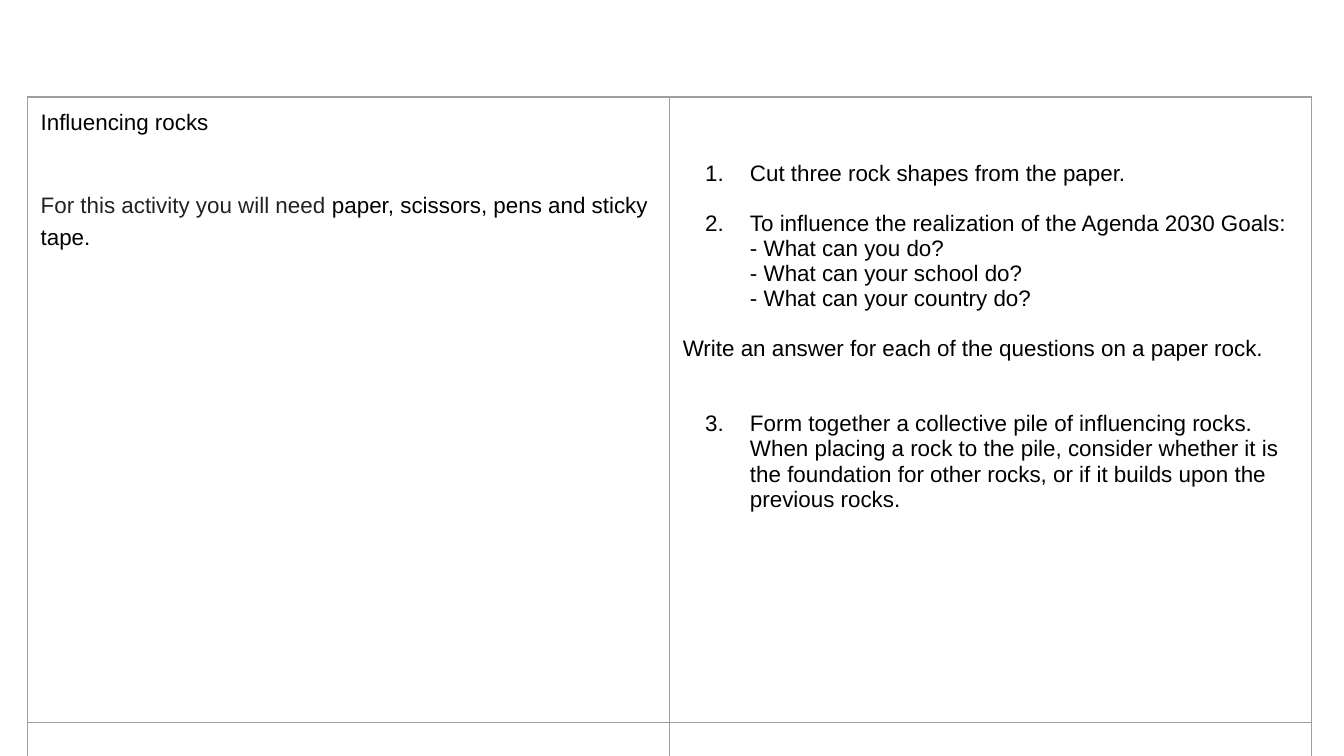
from lxml import etree
from pptx import Presentation
from pptx.dml.color import RGBColor
from pptx.oxml.ns import qn
from pptx.util import Pt

BLACK = RGBColor(0x00, 0x00, 0x00)
CHARCOAL = RGBColor(0x22, 0x22, 0x22)
BORDER_GRAY = RGBColor(0x9E, 0x9E, 0x9E)

FONT = "Arial"
TEXT_SIZE = Pt(12)
LINE = 13.45
INSET = Pt(7.2)
COLUMN_WIDTH = Pt(344)
ROW_HEIGHT = Pt(335)
LIST_INDENT = Pt(36)
NUMBER_HANG = Pt(-24)


def add_color(parent, color):
    etree.SubElement(parent, qn("a:srgbClr"), val=str(color))


def format_cell(cell):
    properties = cell._tc.get_or_add_tcPr()
    for side in ("lnL", "lnR", "lnT", "lnB"):
        border = etree.SubElement(properties, qn(f"a:{side}"), w=str(Pt(0.75)))
        add_color(etree.SubElement(border, qn("a:solidFill")), BORDER_GRAY)
    cell.fill.background()
    cell.margin_left = cell.margin_right = INSET
    cell.margin_top = cell.margin_bottom = INSET


def add_paragraph(cell, runs, blank_lines=0, line_spacing=1.0):
    frame = cell.text_frame
    paragraph = frame.add_paragraph() if frame.text else frame.paragraphs[0]
    paragraph.line_spacing = line_spacing
    paragraph.space_before = Pt(blank_lines * LINE)
    paragraph.font.name = FONT
    paragraph.font.size = TEXT_SIZE
    paragraph.font.color.rgb = BLACK
    for text, color in runs:
        run = paragraph.add_run()
        run.text = text
        if color != BLACK:
            run.font.color.rgb = color
    return paragraph


def add_indented(cell, text, blank_lines=0, number=None, start=1):
    paragraph = add_paragraph(cell, [(text, BLACK)], blank_lines)
    properties = paragraph._p.get_or_add_pPr()
    properties.set("marL", str(LIST_INDENT))
    properties.set("indent", str(NUMBER_HANG if number else 0))
    if number:
        numbering = etree.Element(qn("a:buAutoNum"), type="arabicPeriod")
        if start > 1:
            numbering.set("startAt", str(start))
        number_color = etree.Element(qn("a:buClr"))
        add_color(number_color, BLACK)
        run_defaults = properties.find(qn("a:defRPr"))
        run_defaults.addprevious(number_color)
        run_defaults.addprevious(numbering)


def add_activity_table(slide):
    table = slide.shapes.add_table(
        2, 2, Pt(14.6), Pt(52), COLUMN_WIDTH * 2, ROW_HEIGHT * 2
    ).table
    table.first_row = False
    table.horz_banding = False
    for column in table.columns:
        column.width = COLUMN_WIDTH
    for row in table.rows:
        row.height = ROW_HEIGHT
    for cell in table.iter_cells():
        format_cell(cell)
    return table


def write_materials(cell):
    add_paragraph(cell, [("Influencing rocks", BLACK)])
    add_paragraph(
        cell,
        [
            ("For this activity you will need ", CHARCOAL),
            ("paper, scissors, pens and sticky tape.", BLACK),
        ],
        blank_lines=2,
        line_spacing=1.29,
    )


def write_steps(cell):
    cell.margin_top = INSET + Pt(2 * LINE)
    add_indented(cell, "Cut three rock shapes from the paper.", number=1)
    add_indented(
        cell,
        "To influence the realization of the Agenda 2030 Goals:",
        blank_lines=1,
        number=2,
    )
    for actor in ("you", "your school", "your country"):
        add_indented(cell, f"- What can {actor} do?")
    add_paragraph(
        cell,
        [("Write an answer for each of the questions on a paper rock.", BLACK)],
        blank_lines=1,
    )
    add_indented(
        cell,
        "Form together a collective pile of influencing rocks. "
        "When placing a rock to the pile, consider whether it is the foundation "
        "for other rocks, or if it builds upon the previous rocks.",
        blank_lines=2,
        number=3,
        start=3,
    )


def main():
    presentation = Presentation()
    presentation.slide_width = Pt(720)
    presentation.slide_height = Pt(405)
    slide = presentation.slides.add_slide(presentation.slide_layouts[6])
    table = add_activity_table(slide)
    write_materials(table.cell(0, 0))
    write_steps(table.cell(0, 1))
    presentation.save("out.pptx")


if __name__ == "__main__":
    main()
